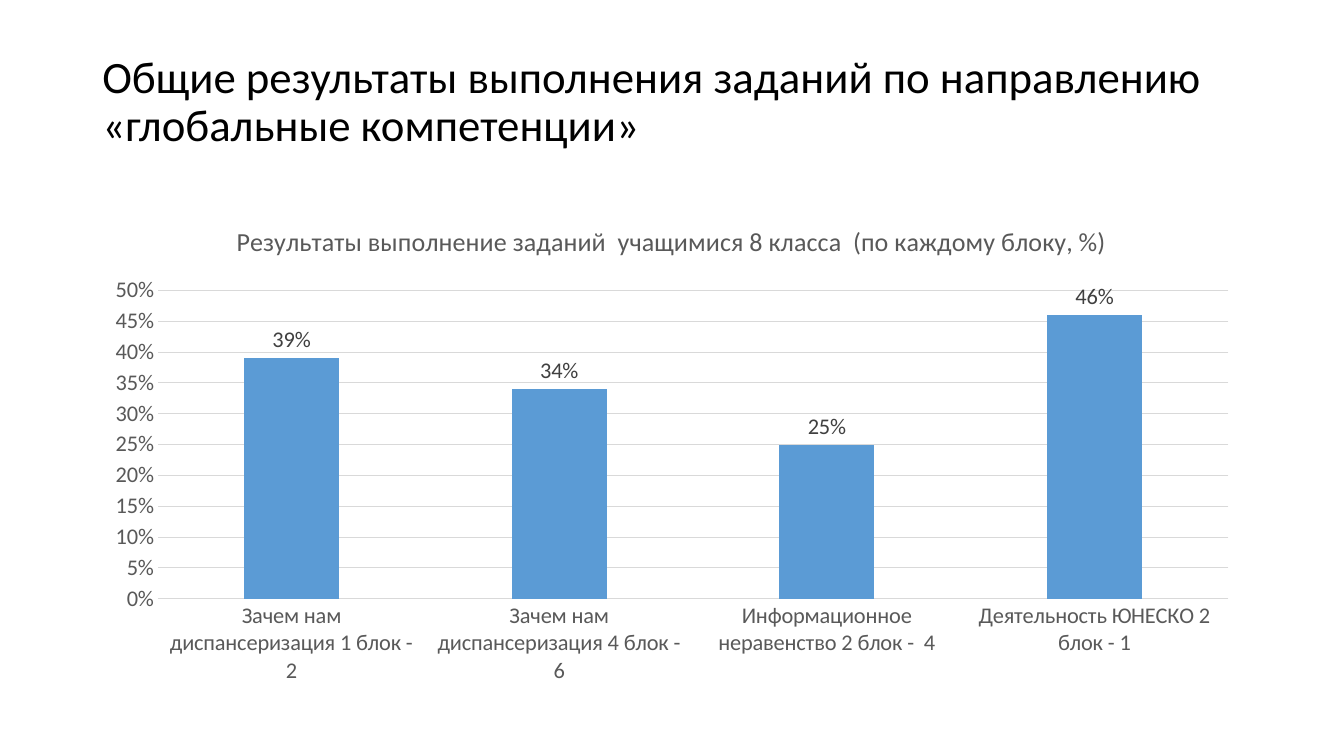
"""Build a slide with a column chart of task results for grade 8."""
import pptx
import pptx.chart.data
import pptx.dml.color
import pptx.enum.chart
import pptx.enum.text
import pptx.util

Cm, Pt = pptx.util.Cm, pptx.util.Pt

HEADING = "Общие результаты выполнения заданий по направлению «глобальные компетенции»"
CHART_TITLE = "Результаты выполнение заданий  учащимися 8 класса  (по каждому блоку, %)"
RESULTS = [
    ("Зачем нам диспансеризация 1 блок - 2", 0.39),
    ("Зачем нам диспансеризация 4 блок - 6", 0.34),
    ("Информационное неравенство 2 блок -  4", 0.25),
    ("Деятельность ЮНЕСКО 2 блок - 1", 0.46),
]
THEME = {
    "font": "Calibri",
    "heading": (32, "000000"),
    "chart_title": (18.6, "595959"),
    "axis": (16, "595959"),
    "label": (16, "404040"),
    "bar": "5B9BD5",
    "grid": "D9D9D9",
}
LEFT, WIDTH = Cm(2.33), Cm(29.21)
HEADING_TOP, HEADING_HEIGHT = Cm(0.5), Cm(4.2)
CHART_TOP, CHART_HEIGHT = Cm(5.13), Cm(12.37)


def rgb(value):
    return pptx.dml.color.RGBColor.from_string(value)


def style_font(font, role):
    size, color = THEME[role]
    font.name, font.size, font.bold = THEME["font"], Pt(size), False
    font.color.rgb = rgb(color)


def style_line(line):
    line.color.rgb = rgb(THEME["grid"])
    line.width = Pt(0.75)


def add_text(tf, text, role):
    p = tf.paragraphs[0]
    r = p.add_run()
    r.text = text
    style_font(r.font, role)
    return p


def add_heading(slide):
    tf = slide.shapes.add_textbox(LEFT, HEADING_TOP, WIDTH, HEADING_HEIGHT).text_frame
    tf.word_wrap = True
    tf.vertical_anchor = pptx.enum.text.MSO_ANCHOR.MIDDLE
    add_text(tf, HEADING, "heading").line_spacing = 0.9


def add_results_chart(slide):
    data = pptx.chart.data.CategoryChartData(number_format="0%")
    data.categories = [name for name, _ in RESULTS]
    data.add_series("Series 1", [value for _, value in RESULTS])
    chart = slide.shapes.add_chart(
        pptx.enum.chart.XL_CHART_TYPE.COLUMN_CLUSTERED,
        LEFT, CHART_TOP, WIDTH, CHART_HEIGHT, data).chart
    style_font(chart.font, "axis")
    chart.has_legend = False
    chart.has_title = True
    add_text(chart.chart_title.text_frame, CHART_TITLE, "chart_title")
    chart.chart_title.include_in_layout = False

    for axis in (chart.category_axis, chart.value_axis):
        axis.major_tick_mark = axis.minor_tick_mark = pptx.enum.chart.XL_TICK_MARK.NONE
        style_font(axis.tick_labels.font, "axis")
    style_line(chart.category_axis.format.line)
    values = chart.value_axis
    values.minimum_scale, values.maximum_scale, values.major_unit = 0, 0.5, 0.05
    values.tick_labels.number_format = "0%"
    values.tick_labels.number_format_is_linked = False
    values.format.line.fill.background()
    values.has_major_gridlines = True
    style_line(values.major_gridlines.format.line)

    plot = chart.plots[0]
    plot.gap_width = 182
    plot.vary_by_categories = False
    fill = plot.series[0].format.fill
    fill.solid()
    fill.fore_color.rgb = rgb(THEME["bar"])
    labels = plot.series[0].data_labels
    labels.show_value = True
    labels.number_format = "0%"
    labels.number_format_is_linked = False
    labels.position = pptx.enum.chart.XL_LABEL_POSITION.OUTSIDE_END
    style_font(labels.font, "label")


def main():
    prs = pptx.Presentation()
    prs.slide_width, prs.slide_height = Cm(33.87), Cm(19.05)
    slide = prs.slides.add_slide(prs.slide_layouts[6])
    add_heading(slide)
    add_results_chart(slide)
    prs.save("out.pptx")


if __name__ == "__main__":
    main()
